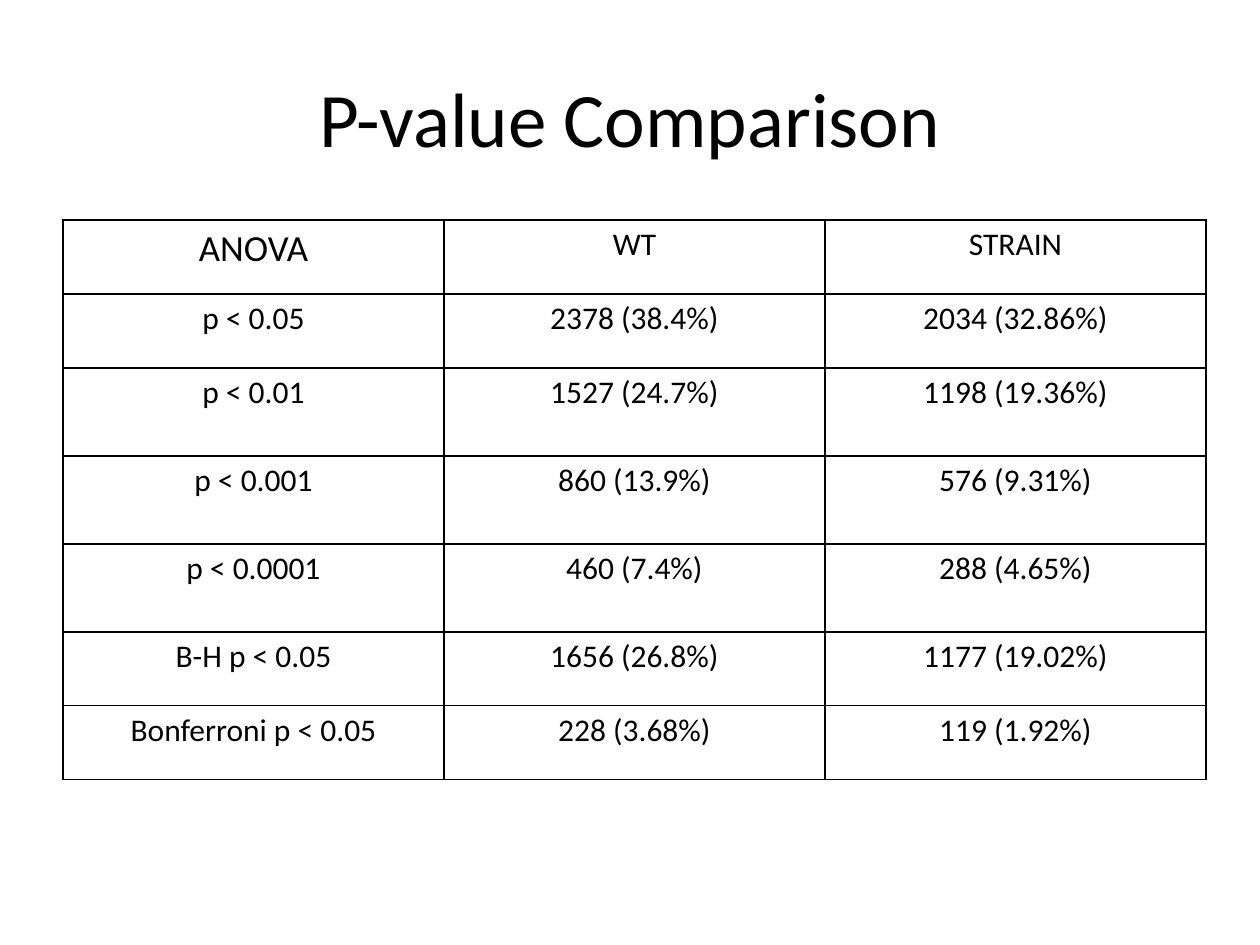
from dataclasses import dataclass

from lxml.etree import SubElement
from pptx import Presentation
from pptx.dml.color import RGBColor
from pptx.enum.text import MSO_ANCHOR, PP_ALIGN
from pptx.oxml.ns import qn
from pptx.util import Pt

EMU_PER_PX = 914400 / 126


@dataclass(frozen=True)
class Theme:
    """Colours, font and type sizes of the slide."""
    ink: str = "000000"
    font: str = "Calibri"
    title: int = 44
    corner: int = 21
    body: int = 18
    border: int = 1


THEME = Theme()
COMPARISON = [
    ("ANOVA", "WT", "STRAIN"),
    ("p < 0.05", "2378 (38.4%)", "2034 (32.86%)"),
    ("p < 0.01", "1527 (24.7%)", "1198 (19.36%)"),
    ("p < 0.001", "860 (13.9%)", "576 (9.31%)"),
    ("p < 0.0001", "460 (7.4%)", "288 (4.65%)"),
    ("B-H p < 0.05", "1656 (26.8%)", "1177 (19.02%)"),
    ("Bonferroni p < 0.05", "228 (3.68%)", "119 (1.92%)"),
]
ROW_HEIGHTS = [74, 74, 88, 88, 88, 74, 74]


def px(length):
    """Turn pixels into EMU."""
    return round(length * EMU_PER_PX)


def write(frame, text, *, size, spacing=1.0):
    """Write one centred paragraph into a text frame."""
    frame.word_wrap = True
    paragraph = frame.paragraphs[0]
    paragraph.alignment = PP_ALIGN.CENTER
    paragraph.line_spacing = spacing
    run = paragraph.add_run()
    run.text = text
    run.font.name = THEME.font
    run.font.size = Pt(size)
    run.font.color.rgb = RGBColor.from_string(THEME.ink)


def outline(cell):
    """Draw all four borders of a cell and leave its fill empty."""
    properties = cell._tc.get_or_add_tcPr()
    for side in ("a:lnL", "a:lnR", "a:lnT", "a:lnB"):
        line = SubElement(properties, qn(side), w=str(Pt(THEME.border)))
        solid = SubElement(line, qn("a:solidFill"))
        SubElement(solid, qn("a:srgbClr"), val=THEME.ink)
    cell.fill.background()


def add_title(slide, left, top, width, height):
    """Place the slide title in the middle of its box."""
    title = slide.shapes.add_textbox(px(left), px(top), px(width), px(height))
    title.text_frame.vertical_anchor = MSO_ANCHOR.MIDDLE
    write(title.text_frame, "P-value Comparison", size=THEME.title)


def add_comparison(slide, left, top, width, height):
    """Place the table of p-value counts with equal columns."""
    table = slide.shapes.add_table(
        len(COMPARISON), len(COMPARISON[0]),
        px(left), px(top), px(width), px(height)).table
    table.first_row = table.horz_banding = False
    for column in table.columns:
        column.width = px(width / len(COMPARISON[0]))
    for r, (entries, row_height) in enumerate(zip(COMPARISON, ROW_HEIGHTS)):
        table.rows[r].height = px(row_height)
        for c, entry in enumerate(entries):
            cell = table.cell(r, c)
            cell.margin_left = cell.margin_right = px(9)
            cell.margin_top = cell.margin_bottom = 0
            size = THEME.corner if r == c == 0 else THEME.body
            write(cell.text_frame, entry, size=size, spacing=1.15)
            outline(cell)


def main():
    """Build and save the slide."""
    deck = Presentation()
    deck.slide_width, deck.slide_height = px(1260), px(945)
    slide = deck.slides.add_slide(deck.slide_layouts[6])
    add_comparison(slide, 63, 220, 1143, sum(ROW_HEIGHTS))
    add_title(slide, 63, 38, 1134, 157)
    deck.save("out.pptx")


if __name__ == "__main__":
    main()
